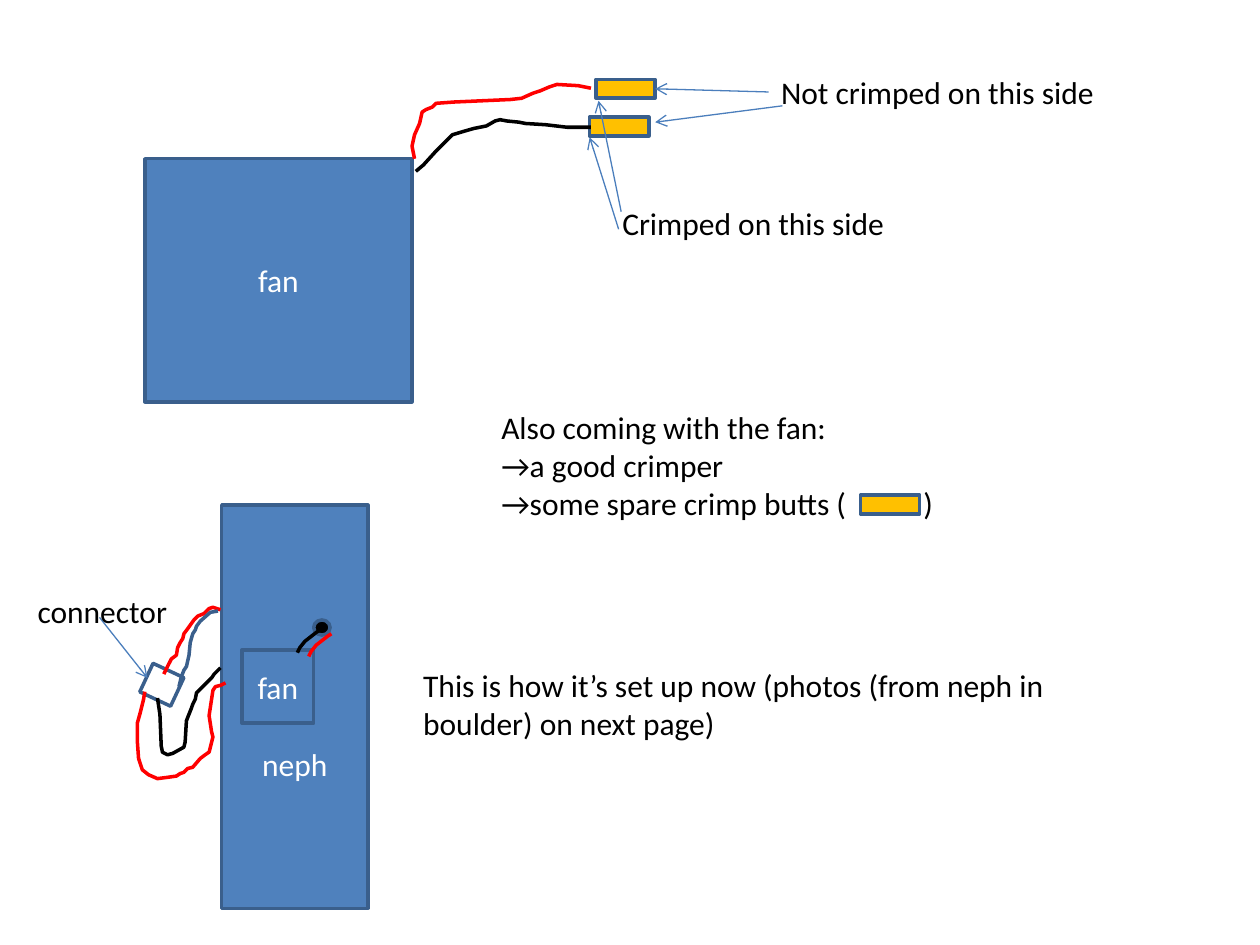
from pptx import Presentation
from pptx import util as u
from pptx.dml.color import RGBColor
from pptx.enum import shapes, text
from pptx.oxml.ns import qn
from lxml import etree

FONT = "Calibri"
BLUE, EDGE, ARROW = "4F81BD", "3A5F8C", "4B7EBC"
GOLD, RED, BLACK, WHITE = "FFC000", "FF0000", "000000", "FFFFFF"
RECT, OVAL = shapes.MSO_SHAPE.RECTANGLE, shapes.MSO_SHAPE.OVAL
BUTT_SIZE = (0.47, 0.15)

BOXES = {
    "fan": (RECT, (1.15, 1.26, 2.12, 1.93), BLUE, "fan"),
    "black butt": (RECT, (4.68, 0.93, *BUTT_SIZE), GOLD, ""),
    "red butt": (RECT, (4.73, 0.63, *BUTT_SIZE), GOLD, ""),
    "spare butt": (RECT, (6.83, 3.93, *BUTT_SIZE), GOLD, ""),
    "neph": (RECT, (1.76, 4.01, 1.16, 3.2), BLUE, "neph"),
    "neph fan": (RECT, (1.92, 5.16, 0.57, 0.58), BLUE, "fan"),
    "wire hole": (OVAL, (2.49, 4.92, 0.13, 0.12), BLACK, ""),
    "connector": (RECT, (1.15, 5.31, 0.27, 0.25), WHITE, ""),
}

SHORT_WIRE = [(2.36, 5.18), (2.38, 5.14), (2.42, 5.09), (2.51, 5.02), (2.54, 5)]
WIRES = [
    (RED, [(3.29, 1.26), (3.27, 1.16), (3.29, 1.07), (3.33, 0.98), (3.35, 0.89),
           (3.38, 0.87), (3.43, 0.85), (3.46, 0.82), (3.6, 0.81), (4.05, 0.79),
           (4.14, 0.78), (4.23, 0.74), (4.29, 0.72), (4.36, 0.69), (4.42, 0.67),
           (4.59, 0.68), (4.69, 0.7)]),
    (BLACK, [(3.3, 1.36), (3.36, 1.31), (3.46, 1.2), (3.55, 1.11), (3.59, 1.07),
             (3.69, 1.04), (3.76, 1.02), (3.86, 1), (3.93, 0.96), (3.97, 0.95),
             (4.02, 0.96), (4.12, 0.97), (4.17, 0.98), (4.33, 0.99), (4.5, 1.01),
             (4.69, 1.01)]),
    (RED, [(1.75, 4.84), (1.69, 4.82), (1.66, 4.83), (1.62, 4.87), (1.57, 4.89),
           (1.54, 4.92), (1.49, 4.99), (1.46, 5.03), (1.45, 5.07), (1.43, 5.1),
           (1.41, 5.14), (1.4, 5.2), (1.36, 5.23), (1.34, 5.27), (1.32, 5.31),
           (1.3, 5.35)]),
    (EDGE, [(1.73, 4.85), (1.67, 4.86), (1.59, 4.93), (1.56, 4.97), (1.55, 5),
            (1.53, 5.03), (1.51, 5.1), (1.5, 5.2), (1.48, 5.29), (1.46, 5.32),
            (1.44, 5.37), (1.42, 5.45)]),
    (RED, [(1.15, 5.49), (1.14, 5.55), (1.12, 5.63), (1.11, 5.67), (1.09, 5.74),
           (1.09, 5.88), (1.1, 6.02), (1.11, 6.05), (1.13, 6.11), (1.18, 6.15),
           (1.25, 6.18), (1.33, 6.17), (1.4, 6.16), (1.43, 6.14), (1.46, 6.13),
           (1.49, 6.1), (1.53, 6.09), (1.59, 6.02), (1.63, 5.99), (1.66, 5.97),
           (1.67, 5.93), (1.69, 5.85), (1.68, 5.81), (1.66, 5.68), (1.69, 5.48),
           (1.71, 5.45), (1.75, 5.44), (1.79, 5.42)]),
    (BLACK, [(1.25, 5.54), (1.27, 5.67), (1.28, 5.92), (1.29, 5.97), (1.33, 5.99),
             (1.37, 5.98), (1.46, 5.93), (1.47, 5.89), (1.48, 5.72), (1.52, 5.62),
             (1.53, 5.59), (1.55, 5.55), (1.56, 5.5), (1.62, 5.44), (1.68, 5.38),
             (1.7, 5.35), (1.75, 5.3)]),
    (BLACK, SHORT_WIRE),
    (RED, [(x + 0.09, y + 0.03) for x, y in SHORT_WIRE]),
]

ARROWS = [
    ((4.91, 1.82), (4.68, 1.09), None),
    ((4.93, 1.68), (4.75, 0.8), None),
    ((6.1, 0.73), (5.2, 0.71), "red butt"),
    ((6.21, 0.84), (5.2, 0.97), None),
    ((0.79, 4.9), (1.17, 5.38), None),
]

NOTES = [
    ((4.84, 1.57, 2.31, 0.4), False, ["Crimped on this side"]),
    ((6.1, 0.53, 2.72, 0.4), False, ["Not crimped on this side"]),
    ((3.88, 3.19, 5.51, 1.01), True,
     ["Also coming with the fan:", "→a good crimper", "→some spare crimp butts (\t)"]),
    ((0.2, 4.65, 1.24, 0.4), False, ["connector"]),
    ((3.26, 5.24, 5.48, 0.71), True,
     ["This is how it’s set up now (photos (from neph in boulder) on next page)"]),
]
CLOSING_TAB = 3.35
NEPH_TOP_INSET = 0.95


def rgb(value):
    return RGBColor.from_string(value)


def write(frame, lines, color=BLACK, align=text.PP_ALIGN.LEFT, wrap=True):
    frame.word_wrap = wrap
    for index, line in enumerate(lines):
        para = frame.paragraphs[0] if index == 0 else frame.add_paragraph()
        para.alignment = align
        if "\t" in line:
            tabs = etree.SubElement(para._p.get_or_add_pPr(), qn("a:tabLst"))
            etree.SubElement(tabs, qn("a:tab"), pos=str(u.Inches(CLOSING_TAB)), algn="l")
        span = para.add_run()
        span.text = line
        span.font.name, span.font.size = FONT, u.Pt(18)
        span.font.color.rgb = rgb(color)


def outline(shape, color, width):
    shape.line.color.rgb = rgb(color)
    shape.line.width = u.Pt(width)


def add_box(page, kind, area, fill, label):
    box = page.shapes.add_shape(kind, *map(u.Inches, area))
    box.shadow.inherit = False
    box.fill.solid()
    box.fill.fore_color.rgb = rgb(fill)
    outline(box, EDGE, 2)
    if label:
        box.text_frame.vertical_anchor = text.MSO_ANCHOR.MIDDLE
        write(box.text_frame, [label], color=WHITE, align=text.PP_ALIGN.CENTER)
    return box


def add_wire(page, color, points):
    start, *rest = [(u.Inches(x), u.Inches(y)) for x, y in points]
    builder = page.shapes.build_freeform(*start)
    builder.add_line_segments(rest, close=False)
    wire = builder.convert_to_shape()
    wire.shadow.inherit = False
    wire.fill.background()
    outline(wire, color, 2)


def add_arrow(page, start, end, target):
    arrow = page.shapes.add_connector(
        shapes.MSO_CONNECTOR.STRAIGHT, *map(u.Inches, start + end))
    if target is not None:
        arrow.end_connect(target, 3)
    outline(arrow, ARROW, 0.75)
    etree.SubElement(arrow.line._get_or_add_ln(), qn("a:tailEnd"), type="arrow")
    etree.SubElement(arrow._element.spPr, qn("a:effectLst"))


def main():
    deck = Presentation()
    deck.slide_width, deck.slide_height = u.Inches(10), u.Inches(7.5)
    page = deck.slides.add_slide(deck.slide_layouts[6])
    boxes = {name: add_box(page, *values) for name, values in BOXES.items()}
    boxes["connector"].rotation = 25
    boxes["neph"].text_frame.margin_top = u.Inches(NEPH_TOP_INSET)
    for color, points in WIRES:
        add_wire(page, color, points)
    for start, end, target in ARROWS:
        add_arrow(page, start, end, boxes.get(target))
    for area, wrap, lines in NOTES:
        note = page.shapes.add_textbox(*map(u.Inches, area))
        write(note.text_frame, lines, wrap=wrap)
    deck.save("out.pptx")


if __name__ == "__main__":
    main()
